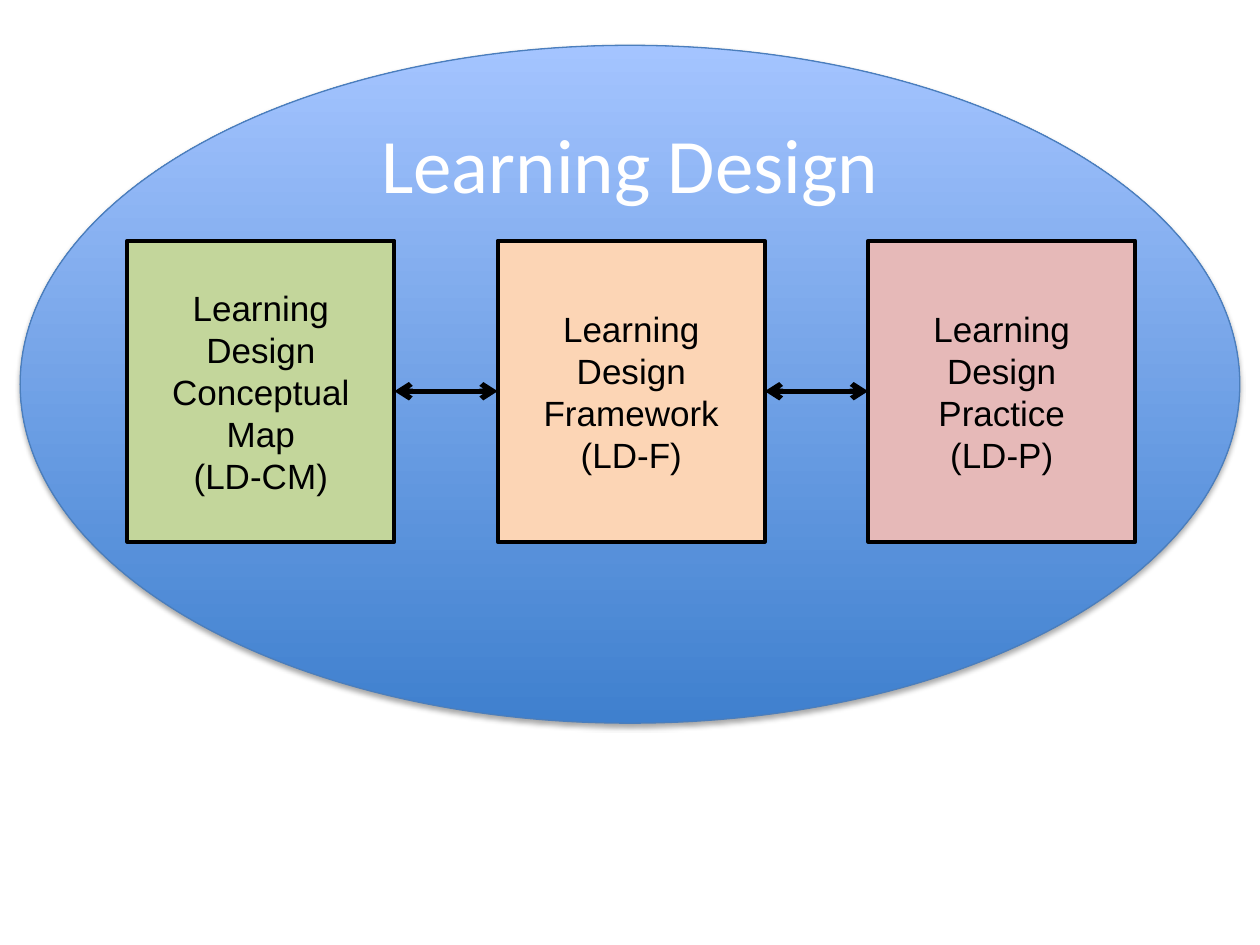
"""Build the Learning Design slide: three linked boxes inside an ellipse."""
from dataclasses import dataclass
from itertools import pairwise

from lxml.etree import SubElement
from pptx import Presentation
from pptx.dml.color import RGBColor
from pptx.enum.shapes import MSO_CONNECTOR, MSO_SHAPE
from pptx.enum.text import MSO_ANCHOR, PP_ALIGN
from pptx.oxml import parse_xml
from pptx.oxml.ns import nsdecls, qn
from pptx.util import Inches, Pt


@dataclass(frozen=True)
class Theme:
    black: RGBColor = RGBColor.from_string("000000")
    white: RGBColor = RGBColor.from_string("FFFFFF")
    ellipse_bottom: RGBColor = RGBColor.from_string("3F80CE")
    ellipse_top: RGBColor = RGBColor.from_string("A4C4FF")
    ellipse_line: RGBColor = RGBColor.from_string("4B7EBC")
    green: RGBColor = RGBColor.from_string("C3D69B")
    orange: RGBColor = RGBColor.from_string("FCD5B5")
    pink: RGBColor = RGBColor.from_string("E6B9B8")
    title_font: str = "Calibri"
    title_size: Pt = Pt(44)
    box_font: str = "Arial"
    box_size: Pt = Pt(20)


def style_text(frame, font_name, size, color):
    frame.word_wrap = True
    frame.vertical_anchor = MSO_ANCHOR.MIDDLE
    for para in frame.paragraphs:
        para.alignment = PP_ALIGN.CENTER
        for span in para.runs:
            span.font.name = font_name
            span.font.size = size
            span.font.color.rgb = color


theme = Theme()
deck = Presentation()
deck.slide_width, deck.slide_height = Inches(10), Inches(7.5)
page = deck.slides.add_slide(deck.slide_layouts[5])

ellipse = page.shapes.add_shape(
    MSO_SHAPE.OVAL, Inches(0.16), Inches(0.36), Inches(9.68), Inches(5.38)
)
ellipse.fill.gradient()
ellipse.fill.gradient_angle = 90
for stop, color in zip(ellipse.fill.gradient_stops, (theme.ellipse_bottom, theme.ellipse_top)):
    stop.color.rgb = color
ellipse.line.color.rgb = theme.ellipse_line
ellipse.line.width = Pt(0.75)
ellipse.shadow.inherit = False
ellipse.element.spPr.find(qn("a:effectLst")).append(parse_xml(
    f'<a:outerShdw {nsdecls("a")} blurRad="{Pt(3.1)}" dist="{Pt(1.8)}" dir="5400000"'
    ' rotWithShape="0"><a:srgbClr val="000000"><a:alpha val="35000"/></a:srgbClr></a:outerShdw>'
))

title = page.shapes.title
title.left, title.top, title.width, title.height = (
    Inches(2.5), Inches(0.89), Inches(5), Inches(0.8)
)
title.text_frame.text = "Learning Design"
style_text(title.text_frame, theme.title_font, theme.title_size, theme.white)
ellipse.element.addnext(title.element)

stages = [
    ("Learning Design Conceptual Map\n(LD-CM)", theme.green),
    ("Learning Design Framework\n(LD-F)", theme.orange),
    ("Learning Design Practice\n(LD-P)", theme.pink),
]
boxes = []
for index, (label, color) in enumerate(stages):
    box = page.shapes.add_shape(
        MSO_SHAPE.RECTANGLE, Inches(1.01 + 2.94 * index), Inches(1.91), Inches(2.12), Inches(2.39)
    )
    box.shadow.inherit = False
    box.fill.solid()
    box.fill.fore_color.rgb = color
    box.line.color.rgb = theme.black
    box.line.width = Pt(2.25)
    box.text_frame.text = label
    style_text(box.text_frame, theme.box_font, theme.box_size, theme.black)
    boxes.append(box)

for left_box, right_box in pairwise(boxes):
    arrow = page.shapes.add_connector(MSO_CONNECTOR.STRAIGHT, 0, 0, 0, 0)
    arrow.begin_connect(right_box, 1)
    arrow.end_connect(left_box, 3)
    arrow.line.color.rgb = theme.black
    arrow.line.width = Pt(3)
    for end in ("a:headEnd", "a:tailEnd"):
        SubElement(arrow.line._get_or_add_ln(), qn(end), type="arrow")
    SubElement(arrow.element.spPr, qn("a:effectLst"))

deck.save("out.pptx")
